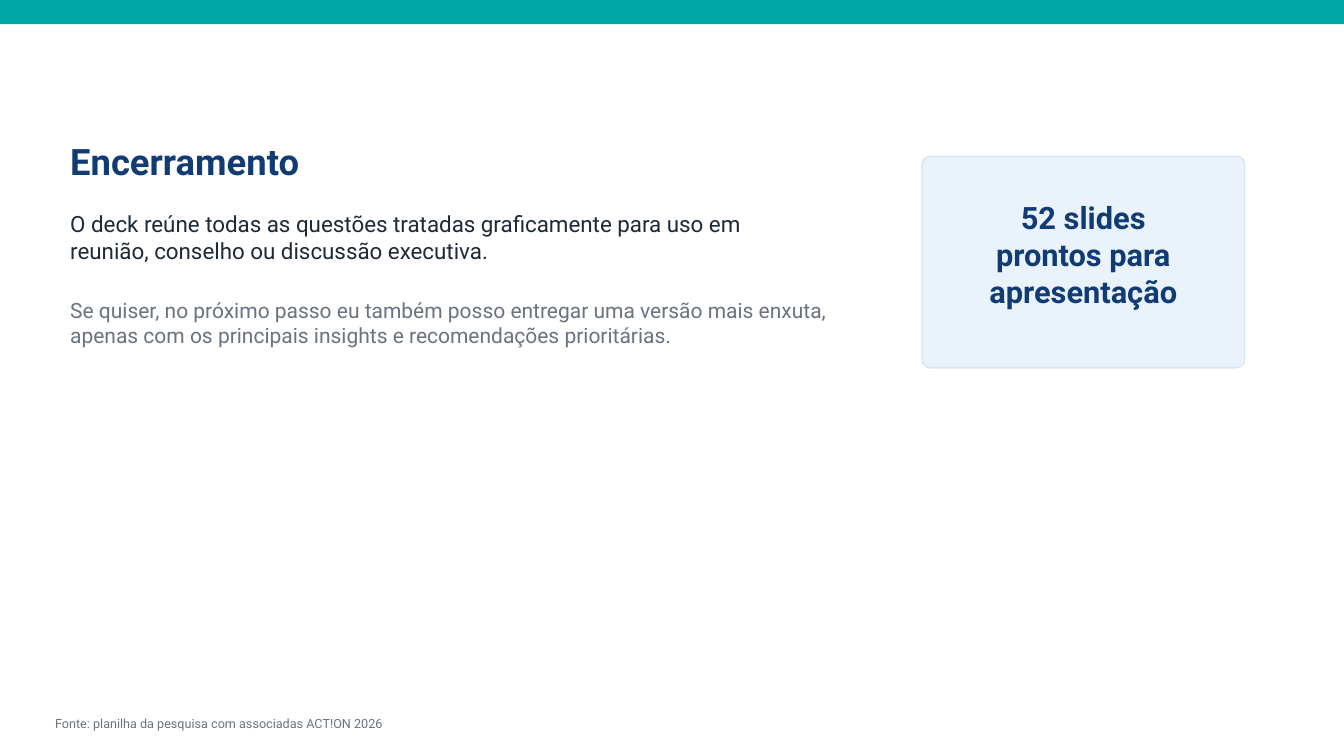
import pptx
import pptx.dml.color
import pptx.enum.shapes
import pptx.enum.text
import pptx.util
from dataclasses import dataclass

Cm = pptx.util.Cm
Shape = pptx.enum.shapes.MSO_SHAPE
Align = pptx.enum.text.PP_ALIGN


@dataclass(frozen=True)
class Theme:
    font: str = "Roboto"
    teal: str = "00A6A6"
    navy: str = "103B73"
    ink: str = "1F2937"
    gray: str = "6B7280"
    card: str = "EAF3FB"
    edge: str = "D7E7F5"
    title: int = 26
    callout: int = 22
    body: int = 16
    offer: int = 15
    source: int = 9


def paint(code):
    return pptx.dml.color.RGBColor.from_string(code)


class Deck:
    def __init__(self, theme, width, height):
        self.theme = theme
        self.file = pptx.Presentation()
        self.file.slide_width = Cm(width)
        self.file.slide_height = Cm(height)
        self.slide = self.file.slides.add_slide(self.file.slide_layouts[6])

    def panel(self, kind, place, fill, edge=None, round=None):
        """Draw a filled shape; place is left, top, width, height in cm."""
        shape = self.slide.shapes.add_shape(kind, *map(Cm, place))
        shape.shadow.inherit = False
        shape.fill.solid()
        shape.fill.fore_color.rgb = paint(fill)
        if edge:
            shape.line.color.rgb = paint(edge)
            shape.line.width = pptx.util.Pt(1)
        else:
            shape.line.fill.background()
        if round is not None:
            shape.adjustments[0] = round

    def text(self, place, lines, size, color, bold=False, align=Align.LEFT):
        """Write one paragraph per line, centred vertically in the place."""
        frame = self.slide.shapes.add_textbox(*map(Cm, place)).text_frame
        frame.word_wrap = True
        frame.vertical_anchor = pptx.enum.text.MSO_ANCHOR.MIDDLE
        frame.text = "\n".join(lines)
        for para in frame.paragraphs:
            para.alignment = align
            para.font.name = self.theme.font
            para.font.size = pptx.util.Pt(size)
            para.font.bold = bold
            para.font.color.rgb = paint(color)


def main():
    theme = Theme()
    width, height = 33.87, 19.05
    left = 1.52
    deck = Deck(theme, width, height)

    deck.panel(Shape.RECTANGLE, (0, 0, width, 0.61), theme.teal)
    deck.text((left, 3.43, 7.62, 1.27), ["Encerramento"],
              theme.title, theme.navy, bold=True)
    deck.text((left, 5.33, 19.3, 1.27),
              ["O deck reúne todas as questões tratadas graficamente para uso "
               "em reunião, conselho ou discussão executiva."],
              theme.body, theme.ink)
    deck.text((left, 6.99, 19.81, 2.29),
              ["Se quiser, no próximo passo eu também posso entregar uma versão "
               "mais enxuta, apenas com os principais insights e recomendações "
               "prioritárias."],
              theme.offer, theme.gray)

    deck.panel(Shape.ROUNDED_RECTANGLE, (23.24, 3.94, 8.13, 5.33),
               theme.card, theme.edge, 0.038)
    deck.text((24, 5.21, 6.6, 2.41),
              ["52 slides", "prontos para apresentação"],
              theme.callout, theme.navy, bold=True, align=Align.CENTER)

    deck.text((1.14, 17.98, 17.27, 0.51),
              ["Fonte: planilha da pesquisa com associadas ACT!ON 2026"],
              theme.source, theme.gray)
    deck.file.save("out.pptx")


if __name__ == "__main__":
    main()
